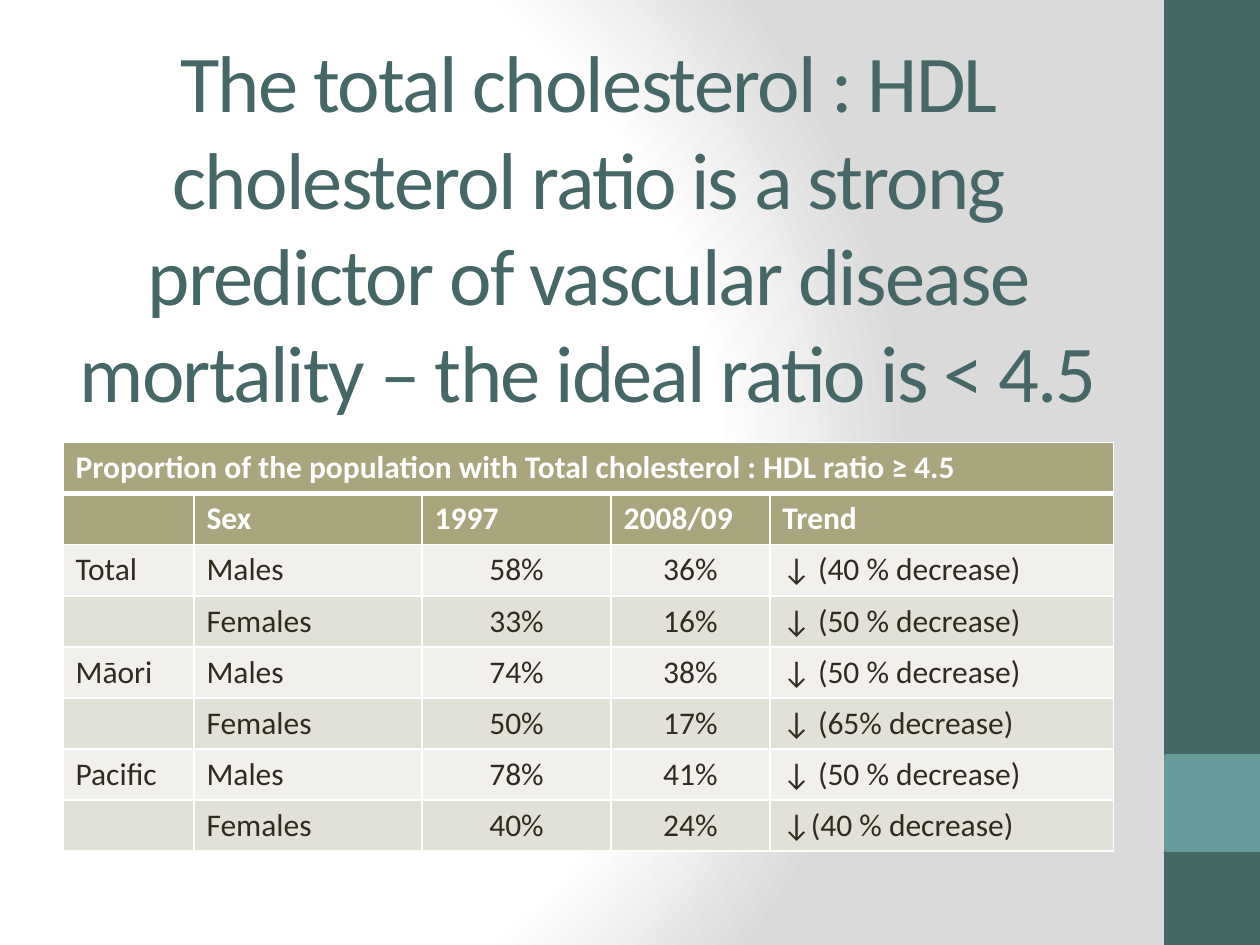
from dataclasses import dataclass

from pptx import Presentation
from pptx.dml.color import RGBColor as Rgb
from pptx.enum.shapes import MSO_SHAPE as Shape
from pptx.enum.text import MSO_ANCHOR as Anchor, MSO_AUTO_SIZE as AutoSize, PP_ALIGN as Align
from pptx.oxml import parse_xml
from pptx.oxml.ns import nsdecls, qn
from pptx.util import Cm, Pt


@dataclass(frozen=True)
class Theme:
    font: str = "Calibri"
    title_size: int = 46
    table_size: int = 18
    title: str = "456867"
    accent: str = "689C9A"
    header: str = "A9A57C"
    bands: tuple = ("F1F0EC", "E2E1D7")
    body: str = "2F2B20"
    white: str = "FFFFFF"
    shade: str = "DADADA"


class SlideBuilder:
    def __init__(self, slide, theme):
        self.slide = slide
        self.theme = theme

    def background(self):
        """Fill the slide with a round gradient, white in the outer area."""
        self.slide.background.fill.gradient()
        old = self.slide.element.find(".//" + qn("a:gradFill"))
        stops = ((0, self.theme.white), (75, self.theme.white), (100, self.theme.shade))
        stop_xml = "".join(
            f'<a:gs pos="{place * 1000}"><a:srgbClr val="{color}"/></a:gs>'
            for place, color in stops)
        old.getparent().replace(old, parse_xml(
            f'<a:gradFill {nsdecls("a")} rotWithShape="1"><a:gsLst>{stop_xml}</a:gsLst>'
            '<a:path path="circle">'
            '<a:fillToRect l="20000" t="50000" r="100000" b="50000"/>'
            '</a:path></a:gradFill>'))

    def block(self, left, top, width, height, color):
        box = self.slide.shapes.add_shape(
            Shape.RECTANGLE, Cm(left), Cm(top), Cm(width), Cm(height))
        box.shadow.inherit = False
        box.fill.solid()
        box.fill.fore_color.rgb = Rgb.from_string(color)
        box.line.color.rgb = Rgb.from_string(color)
        box.line.width = Pt(2)

    def add_text(self, para, text, size, color, bold=False, align=Align.LEFT):
        para.alignment = align
        span = para.add_run()
        span.text = text
        span.font.name = self.theme.font
        span.font.size = Pt(size)
        span.font.bold = bold
        span.font.color.rgb = Rgb.from_string(color)
        return span

    def title(self, text, left, top, width, height):
        box = self.slide.shapes.title
        box.left, box.top, box.width, box.height = map(Cm, (left, top, width, height))
        frame = box.text_frame
        frame.word_wrap = True
        frame.auto_size = AutoSize.NONE
        frame.vertical_anchor = Anchor.MIDDLE
        span = self.add_text(frame.paragraphs[0], text, self.theme.title_size,
                             self.theme.title, align=Align.CENTER)
        span.font._element.set("spc", "-100")

    def borders(self, cell, top=1, bottom=1):
        properties = cell._tc.get_or_add_tcPr()
        for side, width in (("L", 1), ("R", 1), ("T", top), ("B", bottom)):
            properties.append(parse_xml(
                f'<a:ln{side} {nsdecls("a")} w="{Pt(width)}"><a:solidFill>'
                f'<a:srgbClr val="{self.theme.white}"/></a:solidFill></a:ln{side}>'))

    def table(self, rows, left, top, widths, row_height, header_rows, centred):
        theme = self.theme
        grid = self.slide.shapes.add_table(
            len(rows), len(widths), Cm(left), Cm(top),
            Cm(sum(widths)), Cm(row_height * len(rows))).table
        for column, width in zip(grid.columns, widths):
            column.width = Cm(width)
        for r, row in enumerate(rows):
            grid.rows[r].height = Cm(row_height)
            is_header = r < header_rows
            fill = theme.header if is_header else theme.bands[(r - header_rows) % 2]
            for c, text in enumerate(row):
                cell = grid.cell(r, c)
                # A heavier rule separates the caption from the column heads
                self.borders(cell, top=3 if r == 1 else 1, bottom=3 if r == 0 else 1)
                cell.fill.solid()
                cell.fill.fore_color.rgb = Rgb.from_string(fill)
                if text:
                    middle = c in centred and not is_header
                    self.add_text(cell.text_frame.paragraphs[0], text, theme.table_size,
                                  theme.white if is_header else theme.body, is_header,
                                  Align.CENTER if middle else Align.LEFT)
        # The caption spans the whole first row
        grid.cell(0, 0).merge(grid.cell(0, len(widths) - 1))


ROWS = [
    ("Proportion of the population with Total cholesterol : HDL ratio ≥ 4.5", "", "", "", ""),
    ("", "Sex", "1997", "2008/09", "Trend"),
    ("Total", "Males", "58%", "36%", "↓ (40 % decrease)"),
    ("", "Females", "33%", "16%", "↓ (50 % decrease)"),
    ("Māori", "Males", "74%", "38%", "↓ (50 % decrease)"),
    ("", "Females", "50%", "17%", "↓ (65% decrease)"),
    ("Pacific", "Males", "78%", "41%", "↓ (50 % decrease)"),
    ("", "Females", "40%", "24%", "↓(40 % decrease)"),
]


def main():
    deck = Presentation()
    deck.slide_width, deck.slide_height = Cm(25.4), Cm(19.05)
    theme = Theme()
    page = SlideBuilder(deck.slides.add_slide(deck.slide_layouts[5]), theme)

    # Background and side band
    page.background()
    page.block(23.5, 0, 1.9, 19.05, theme.title)
    page.block(23.5, 15.24, 1.9, 1.9, theme.accent)

    # Heading
    page.title("The total cholesterol : HDL cholesterol ratio is a strong predictor of "
               "vascular disease mortality – the ideal ratio is < 4.5",
               1.27, 0.76, 21.17, 7.57)

    # Ratio by group and sex
    page.table(ROWS, 1.27, 8.92, (2.64, 4.6, 3.81, 3.2, 6.93), 1.03,
               header_rows=2, centred=(2, 3))

    deck.save("out.pptx")


if __name__ == "__main__":
    main()
